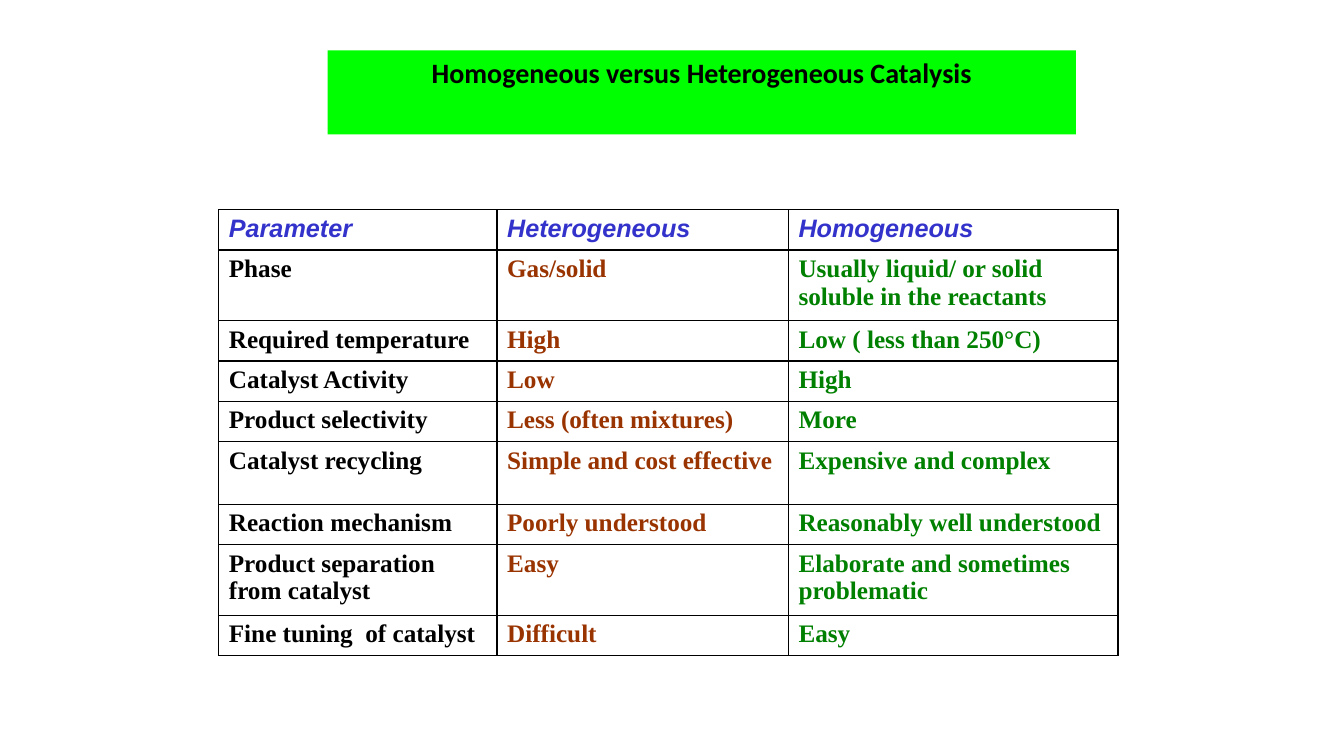
import pptx
import pptx.util
import pptx.dml.color
import pptx.enum.text
import pptx.oxml
import pptx.oxml.ns

# Content
HEADING = "Homogeneous versus Heterogeneous Catalysis"
COMPARISON = [
    ("Parameter", "Heterogeneous", "Homogeneous"),
    ("Phase", "Gas/solid", "Usually liquid/ or solid soluble in the reactants"),
    ("Required temperature", "High", "Low ( less than 250°C)"),
    ("Catalyst Activity", "Low", "High"),
    ("Product selectivity", "Less (often mixtures)", "More"),
    ("Catalyst recycling", "Simple and cost effective", "Expensive and complex"),
    ("Reaction mechanism", "Poorly understood", "Reasonably well understood"),
    ("Product separation from catalyst", "Easy", "Elaborate and sometimes problematic"),
    ("Fine tuning  of catalyst", "Difficult", "Easy"),
]

# Formats and grid, in inches and points
COLORS = {"banner": "00FF00", "heading": "000000", "header": "3333CC", "border": "000000",
          "parameter": "000000", "heterogeneous": "993300", "homogeneous": "008000"}
COLUMN_COLORS = ("parameter", "heterogeneous", "homogeneous")
HEADING_FONT = {"name": "Calibri", "size": 20, "bold": True, "italic": False}
HEADER_FONT = {"name": "Arial", "size": 18, "bold": True, "italic": True}
BODY_FONT = {"name": "Times New Roman", "size": 18, "bold": True, "italic": False}
SLIDE_SIZE = (13.33, 7.5)
BANNER = (3.25, 0.5, 7.42, 0.43)
TABLE_CORNER = (2.17, 2.08)
COLUMN_WIDTHS = (2.76, 2.89, 3.27)
ROW_HEIGHT = 0.4
TALL_ROWS = {"Phase": 0.7, "Catalyst recycling": 0.62, "Product separation from catalyst": 0.7}


def rgb(role):
    return pptx.dml.color.RGBColor.from_string(COLORS[role])


def format_font(font, values, role):
    for attribute, value in values.items():
        setattr(font, attribute, pptx.util.Pt(value) if attribute == "size" else value)
    font.color.rgb = rgb(role)


def add_borders(cell):
    properties = cell._tc.get_or_add_tcPr()
    for position, side in enumerate(("lnL", "lnR", "lnT", "lnB")):
        properties.insert(position, pptx.oxml.parse_xml(
            f'<a:{side} {pptx.oxml.ns.nsdecls("a")} w="{pptx.util.Pt(1)}"><a:solidFill>'
            f'<a:srgbClr val="{COLORS["border"]}"/></a:solidFill></a:{side}>'))


def add_heading(slide):
    banner = slide.shapes.title
    banner.left, banner.top, banner.width, banner.height = map(pptx.util.Inches, BANNER)
    banner.fill.solid()
    banner.fill.fore_color.rgb = rgb("banner")
    frame = banner.text_frame
    frame.text = HEADING
    frame.word_wrap = True
    frame.auto_size = pptx.enum.text.MSO_AUTO_SIZE.SHAPE_TO_FIT_TEXT
    frame.vertical_anchor = pptx.enum.text.MSO_ANCHOR.TOP
    frame.paragraphs[0].alignment = pptx.enum.text.PP_ALIGN.CENTER
    format_font(frame.paragraphs[0].runs[0].font, HEADING_FONT, "heading")


def add_comparison(slide):
    heights = [TALL_ROWS.get(row[0], ROW_HEIGHT) for row in COMPARISON]
    extent = (sum(COLUMN_WIDTHS), sum(heights))
    table = slide.shapes.add_table(len(heights), len(COLUMN_WIDTHS),
                                   *map(pptx.util.Inches, TABLE_CORNER + extent)).table
    table.first_row = table.horz_banding = False
    for column, width in zip(table.columns, COLUMN_WIDTHS):
        column.width = pptx.util.Inches(width)
    for row_index, (row, height) in enumerate(zip(COMPARISON, heights)):
        table.rows[row_index].height = pptx.util.Inches(height)
        for column_index, text in enumerate(row):
            cell = table.cell(row_index, column_index)
            cell.text = text
            cell.fill.background()
            add_borders(cell)
            is_header = row_index == 0
            format_font(cell.text_frame.paragraphs[0].runs[0].font,
                        HEADER_FONT if is_header else BODY_FONT,
                        "header" if is_header else COLUMN_COLORS[column_index])


def main():
    deck = pptx.Presentation()
    deck.slide_width, deck.slide_height = map(pptx.util.Inches, SLIDE_SIZE)
    slide = deck.slides.add_slide(deck.slide_layouts.get_by_name("Title Only"))
    add_heading(slide)
    add_comparison(slide)
    deck.save("out.pptx")


if __name__ == "__main__":
    main()
